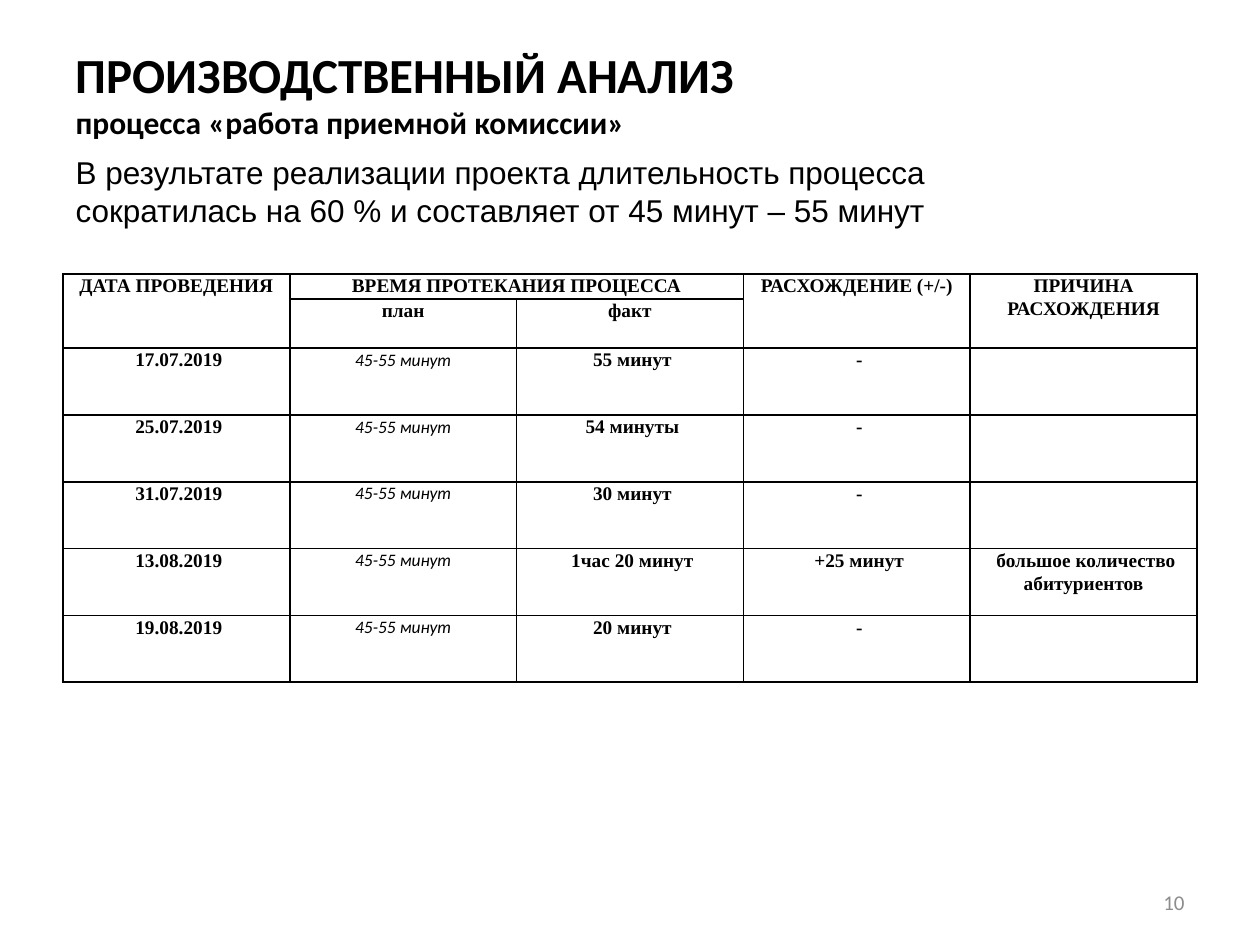
from lxml.etree import SubElement
from pptx import Presentation
from pptx.dml.color import RGBColor
from pptx.enum.text import MSO_ANCHOR, MSO_AUTO_SIZE, PP_ALIGN
from pptx.oxml.ns import qn
from pptx.util import Inches, Pt

WIDTH, HEIGHT = Inches(10), Inches(7.5)
MARGIN = WIDTH * 0.05

TITLE_LINES = [
    ("ПРОИЗВОДСТВЕННЫЙ АНАЛИЗ", "Calibri", 28, True, 0),
    ("процесса «работа приемной комиссии»", "Calibri", 18, True, 0),
    ("В результате реализации проекта длительность процесса", "Arial", 18, False, 7),
    ("сократилась на 60 % и составляет от 45 минут – 55 минут", "Arial", 18, False, 0),
]
HEADINGS = [
    ["ДАТА ПРОВЕДЕНИЯ", "ВРЕМЯ ПРОТЕКАНИЯ ПРОЦЕССА", "", "РАСХОЖДЕНИЕ (+/-)", "ПРИЧИНА РАСХОЖДЕНИЯ"],
    ["", "план", "факт", "", ""],
]
PLAN = "45-55 минут"
MEASUREMENTS = [
    ("17.07.2019", "55 минут", "-", ""),
    ("25.07.2019", "54 минуты", "-", ""),
    ("31.07.2019", "30 минут", "-", ""),
    ("13.08.2019", "1час 20 минут", "+25 минут", "большое количество абитуриентов"),
    ("19.08.2019", "20 минут", "-", ""),
]
MERGES = [((0, 0), (1, 0)), ((0, 1), (0, 2)), ((0, 3), (1, 3)), ((0, 4), (1, 4))]
HEADING_ROW, DATA_ROW = Inches(0.19), Inches(0.53)


def color(value):
    return RGBColor.from_string(value)


def format_font(font, name, size, shade="000000", bold=False, italic=False):
    font.name, font.size = name, Pt(size)
    font.bold, font.italic = bold, italic
    font.color.rgb = color(shade)


def place(shape, box):
    shape.left, shape.top, shape.width, shape.height = (int(length) for length in box)


def add_title(page, box):
    title = page.shapes.title
    place(title, box)
    frame = title.text_frame
    frame.text = "\n".join(line[0] for line in TITLE_LINES)
    frame.word_wrap = False
    frame.auto_size = MSO_AUTO_SIZE.NONE
    frame.vertical_anchor = MSO_ANCHOR.TOP
    for para, (_, name, size, bold, gap) in zip(frame.paragraphs, TITLE_LINES):
        para.alignment = PP_ALIGN.LEFT
        para.space_before = Pt(gap)
        format_font(para.runs[0].font, name, size, bold=bold)


def add_borders(cell, shade, width):
    properties = cell._tc.get_or_add_tcPr()
    for index, side in enumerate(("lnL", "lnR", "lnT", "lnB")):
        line = SubElement(properties, qn(f"a:{side}"), w=str(Pt(width)))
        fill = SubElement(line, qn("a:solidFill"))
        SubElement(fill, qn("a:srgbClr"), val=shade)
        properties.insert(index, line)


def format_cell(cell, text):
    cell.text = text
    cell.fill.background()
    cell.margin_left = cell.margin_right = Inches(0.07)
    cell.margin_top = cell.margin_bottom = 0
    add_borders(cell, "000000", 1)
    para = cell.text_frame.paragraphs[0]
    para.alignment = PP_ALIGN.CENTER
    para.line_spacing = 1.07
    for span in para.runs:
        if text == PLAN:
            format_font(span.font, "Calibri", 10, italic=True)
        else:
            format_font(span.font, "Times New Roman", 11, bold=True)


def add_measurements(page, left, top, width):
    rows = HEADINGS + [
        [f" {date}", PLAN, f" {fact}", f" {gap}", reason and f" {reason}"]
        for date, fact, gap, reason in MEASUREMENTS
    ]
    heights = [HEADING_ROW] * len(HEADINGS) + [DATA_ROW] * len(MEASUREMENTS)
    columns = len(rows[0])
    table = page.shapes.add_table(
        len(rows), columns, int(left), int(top), int(width), sum(heights)
    ).table
    table.first_row = table.horz_banding = False
    for column in table.columns:
        column.width = int(width / columns)
    for row, height, texts in zip(table.rows, heights, rows):
        row.height = height
        for cell, text in zip(row.cells, texts):
            format_cell(cell, text)
    for first, last in MERGES:
        table.cell(*first).merge(table.cell(*last))


def add_page_number(page, box):
    frame = page.shapes.add_textbox(*(int(length) for length in box)).text_frame
    frame.text = "10"
    frame.word_wrap = True
    frame.vertical_anchor = MSO_ANCHOR.MIDDLE
    para = frame.paragraphs[0]
    para.alignment = PP_ALIGN.RIGHT
    format_font(para.runs[0].font, "Calibri", 12, "8C8C8C")


def main():
    deck = Presentation()
    deck.slide_width, deck.slide_height = WIDTH, HEIGHT
    page = deck.slides.add_slide(deck.slide_layouts[5])
    number_width = WIDTH * 0.23
    add_page_number(
        page, (WIDTH - MARGIN - number_width, HEIGHT * 0.93, number_width, HEIGHT * 0.05)
    )
    add_measurements(page, MARGIN, HEIGHT * 0.29, WIDTH - 2 * MARGIN)
    add_title(page, (MARGIN, HEIGHT * 0.04, WIDTH * 0.71, HEIGHT * 0.25))
    deck.save("out.pptx")


if __name__ == "__main__":
    main()
